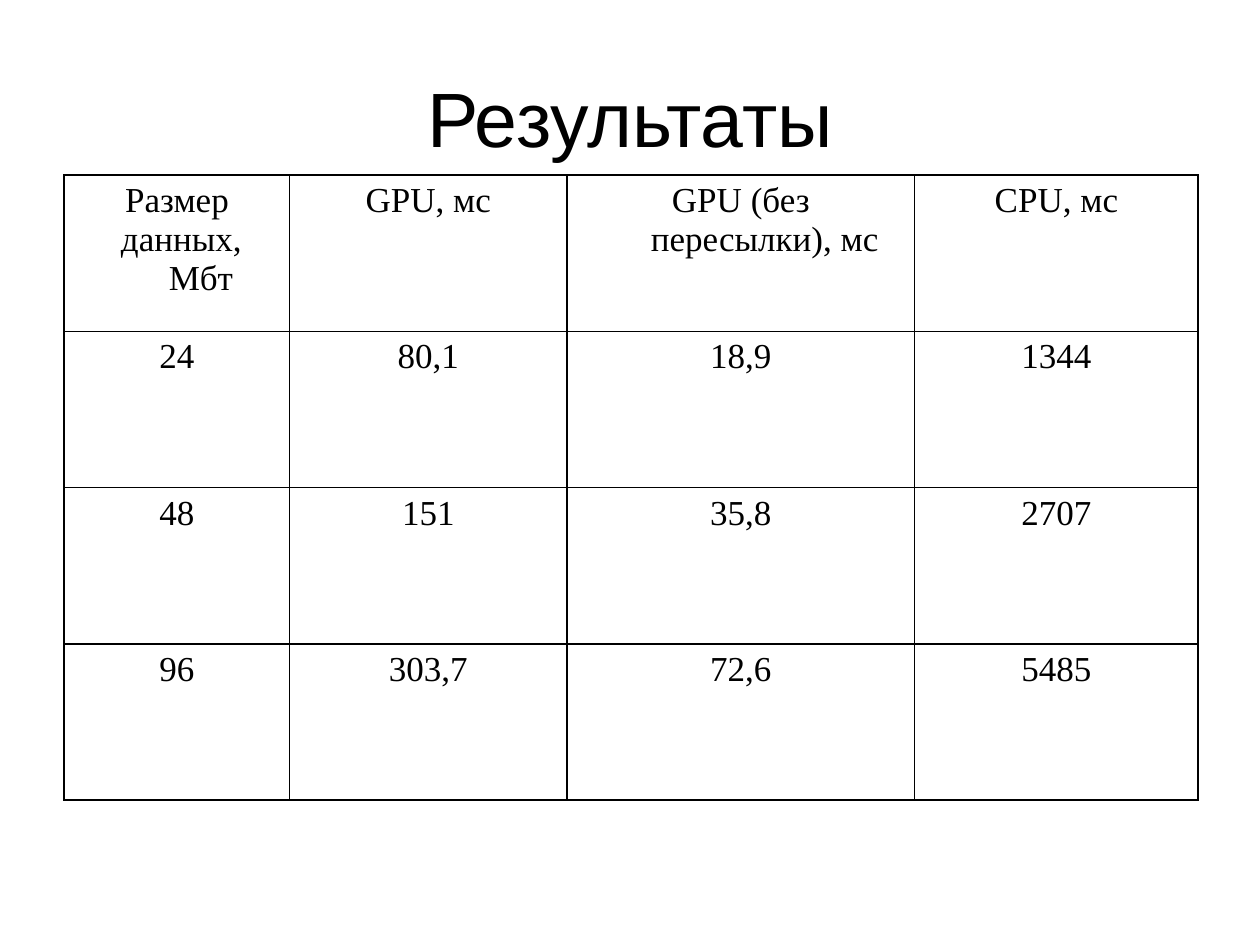
from lxml import etree
from pptx import Presentation
from pptx.dml.color import RGBColor
from pptx.enum.text import MSO_ANCHOR, PP_ALIGN
from pptx.oxml.ns import qn
from pptx.util import Inches, Pt

CENTER = PP_ALIGN.CENTER
MIDDLE = MSO_ANCHOR.MIDDLE
BLACK = "000000"
HANGING = Inches(0.38)
COLUMN_WIDTHS = [1.79, 2.2, 2.76, 2.25]
ROW_HEIGHT = 1.24
RESULTS = [
    ["Размер\n данных, Мбт", "GPU, мс", "GPU (без пересылки), мс", "CPU, мс"],
    ["24", "80,1", "18,9", "1344"],
    ["48", "151", "35,8", "2707"],
    ["96", "303,7", "72,6", "5485"],
]


def rgb(color):
    return RGBColor.from_string(color)


def style_paragraph(p, font, size):
    p.alignment = CENTER
    p.font.name = font
    p.font.size = Pt(size)
    p.font.color.rgb = rgb(BLACK)


def add_title(slide, text):
    box = slide.shapes.add_textbox(Inches(0.5), Inches(0.3), Inches(9), Inches(1.25))
    tf = box.text_frame
    tf.word_wrap = True
    tf.vertical_anchor = MIDDLE
    tf.text = text
    style_paragraph(tf.paragraphs[0], "Arial", 44)


def set_borders(cell, color, width):
    tc_pr = cell._tc.get_or_add_tcPr()
    for i, side in enumerate(("lnL", "lnR", "lnT", "lnB")):
        line = etree.Element(qn(f"a:{side}"), w=str(Pt(width)))
        fill = etree.SubElement(line, qn("a:solidFill"))
        etree.SubElement(fill, qn("a:srgbClr"), val=color)
        tc_pr.insert(i, line)


def fill_cell(cell, text):
    cell.text = text
    cell.fill.background()
    set_borders(cell, BLACK, 1)
    for p in cell.text_frame.paragraphs:
        style_paragraph(p, "Times New Roman", 20)
        p_pr = p._p.get_or_add_pPr()
        p_pr.set("marL", str(HANGING))
        p_pr.set("indent", str(-HANGING))


def add_results_table(slide):
    frame = slide.shapes.add_table(
        len(RESULTS), len(COLUMN_WIDTHS), Inches(0.51), Inches(1.39),
        Inches(sum(COLUMN_WIDTHS)), Inches(ROW_HEIGHT * len(RESULTS)))
    table = frame.table
    table.first_row = False
    table.horz_banding = False
    for column, width in zip(table.columns, COLUMN_WIDTHS):
        column.width = Inches(width)
    for row, texts in zip(table.rows, RESULTS):
        row.height = Inches(ROW_HEIGHT)
        for cell, text in zip(row.cells, texts):
            fill_cell(cell, text)


def main():
    prs = Presentation()
    prs.slide_width = Inches(10)
    prs.slide_height = Inches(7.5)
    slide = prs.slides.add_slide(prs.slide_layouts[6])
    add_title(slide, "Результаты")
    add_results_table(slide)
    prs.save("out.pptx")


if __name__ == "__main__":
    main()
